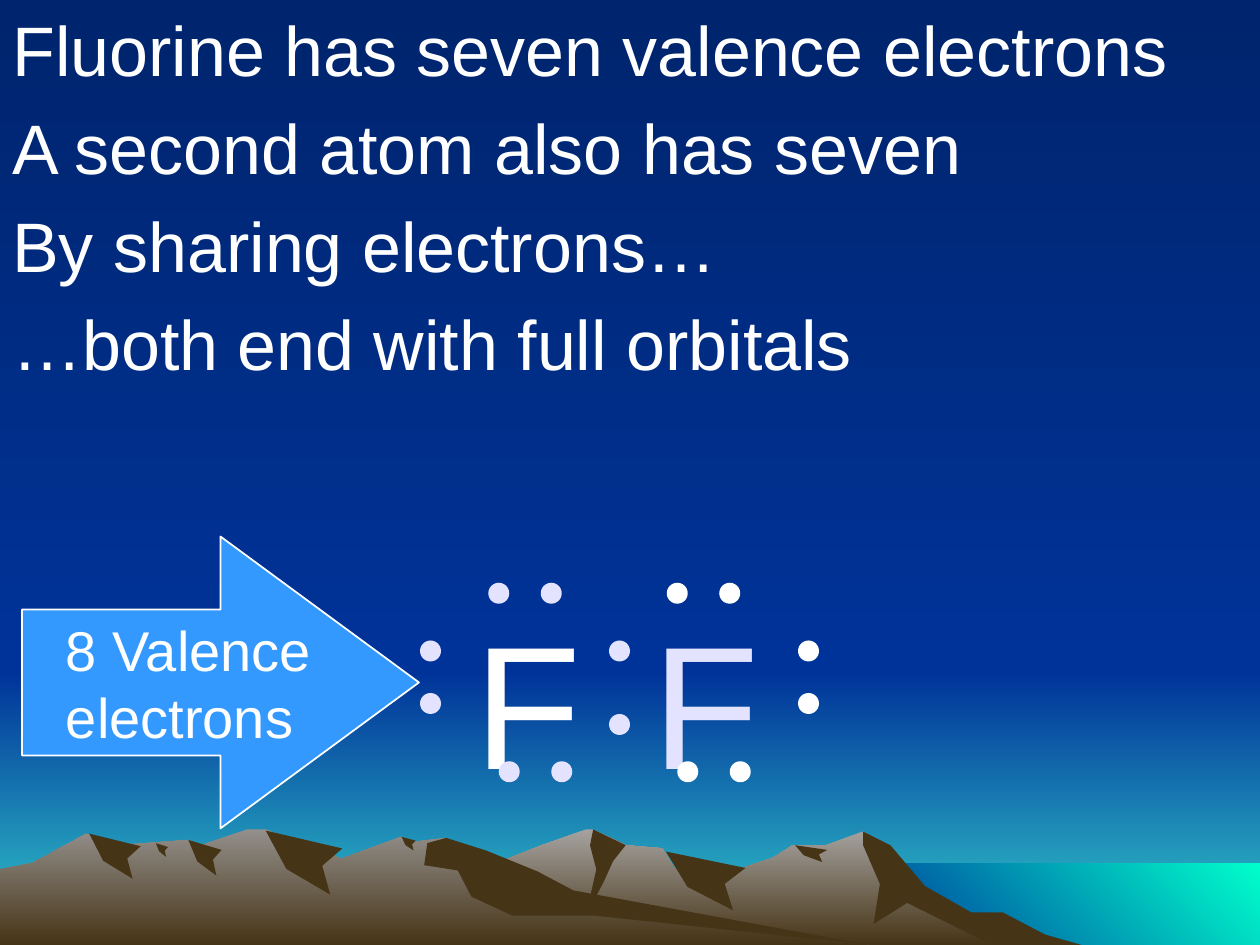
"""Build a slide on how two fluorine atoms share electrons."""
import pptx
import pptx.util
import pptx.dml.color
import pptx.enum.shapes
import pptx.enum.text
import lxml.etree

THEME = {
    "font": "Arial", "body": 40, "atom": 100, "note": 32,
    "white": "FFFFFF", "lilac": "E3E3FF", "blue": "3399FF",
    "night": ("00246D", "003399"), "dusk": ("003399", "33CCCC"),
    "sea": ("003399", "00FFCC"), "peak": ("A5A29F", "463416"),
    "ridge": ("938F8B", "463416"), "shade": "463416",
}
DOWN, RISE = 270, 45
COLS, ROWS = 120, 90

deck = pptx.Presentation()
deck.slide_width = pptx.util.Inches(10)
deck.slide_height = pptx.util.Inches(7.5)
slide = deck.slides.add_slide(deck.slide_layouts[6])
kinds = pptx.enum.shapes.MSO_SHAPE
cell = deck.slide_width / COLS


def paint(fill, color, angle=DOWN):
    if isinstance(color, str):
        fill.solid()
        fill.fore_color.rgb = pptx.dml.color.RGBColor.from_string(color)
        return
    fill.gradient()
    fill.gradient_angle = angle
    for stop, tone in zip(fill.gradient_stops, color):
        stop.color.rgb = pptx.dml.color.RGBColor.from_string(tone)


def write(text, box, size, color="white", before=50, hang=0, fit=True):
    frame = slide.shapes.add_textbox(*[round(n * cell) for n in box]).text_frame
    frame.word_wrap = True
    if fit:
        frame.auto_size = pptx.enum.text.MSO_AUTO_SIZE.SHAPE_TO_FIT_TEXT
    frame.text = text
    for para in frame.paragraphs:
        props = para._p.get_or_add_pPr()
        if hang:
            props.set("marL", str(pptx.util.Inches(hang)))
            props.set("indent", str(-pptx.util.Inches(hang)))
        space = lxml.etree.SubElement(props, pptx.oxml.ns.qn("a:spcBef"))
        share = lxml.etree.SubElement(space, pptx.oxml.ns.qn("a:spcPct"))
        share.set("val", str(before * 1000))
        font = para.runs[0].font
        font.name = THEME["font"]
        font.size = pptx.util.Pt(THEME[size])
        font.color.rgb = pptx.dml.color.RGBColor.from_string(THEME[color])


paint(slide.background.fill, THEME["night"])

# Flat bands: sky above the dusk line, dusk below it, sea at the right
dusk, shore, coast = 64, 82.2, 82
bands = [("dusk", DOWN, (0, dusk, COLS, ROWS - dusk)),
         ("night", DOWN, (0, 0, COLS, dusk)),
         ("sea", RISE, (coast, shore, COLS - coast, ROWS - shore))]
for tone, angle, box in bands:
    band = slide.shapes.add_shape(kinds.RECTANGLE, *[round(n * cell) for n in box])
    band.shadow.inherit = False
    band.line.fill.background()
    paint(band.fill, THEME[tone], angle)

far = [(31, 90), (39.2, 85.1), (47.3, 82.2), (51.6, 80.5), (55.8, 79), (56.5, 79),
       (59.6, 80.5), (63.1, 80.8), (64.3, 82.8), (67.9, 83.6), (73.6, 81.7),
       (75.5, 80.5), (78.7, 80.5), (82.2, 79.2), (84.2, 80.5), (86.8, 83.8),
       (91.7, 86.8), (96.2, 88.8), (98.5, 90)]
near = [(0, 90), (0, 82.8), (3.1, 82.2), (8.2, 79.4), (11.3, 80.5), (17.8, 80),
        (19.2, 80.5), (23.5, 79), (25.4, 79), (26.8, 79.6), (28.3, 81.7),
        (31.2, 81.1), (32.5, 81.8), (38.2, 79.7), (39.2, 80.2), (42.5, 79.8),
        (51.8, 85.4), (80, 89.8), (82.8, 90)]
east = [(82.2, 79.2), (84.8, 80.5), (88.1, 84.4), (92.5, 86.9), (95.5, 86.9),
        (99.5, 89), (103, 90), (94.5, 90), (86.4, 86), (83.2, 88), (83.8, 84.2),
        (82.2, 80.5)]
cliff = [(56.5, 79), (59.6, 80.5), (58.4, 82), (57.5, 84), (55.8, 87.2),
         (56.8, 82.8), (56.2, 80.5)]
spur = [(40.7, 80.3), (42.5, 79.8), (46.3, 81), (51.2, 83), (54.6, 84.8),
        (82.8, 90), (56.6, 87.2), (48.8, 87.2), (44.9, 85.4), (43.6, 82.9),
        (40.4, 82.4)]
slopes = [("peak", far), ("shade", east), ("shade", cliff),
          ("ridge", near), ("shade", spur)]

# Every gully is one outline, stretched to its own box
gully = [(0.04, 0), (1, 0.28), (0.75, 0.55), (0.85, 1), (0.3, 0.6)]
gaps = [(63.1, 81.1, 7.9, 5.6), (75.6, 80.5, 3.2, 1.6), (38.2, 79.7, 1.4, 1.3),
        (25, 79.1, 7.6, 6.1), (17.8, 80, 3.3, 3.4), (14.8, 80.3, 1.2, 1.3),
        (8.3, 79.4, 5.1, 4.3)]
for left, top, wide, high in gaps:
    slopes.append(("shade", [(left + x * wide, top + y * high) for x, y in gully]))

for tone, spots in slopes:
    spots = [(x * cell, y * cell) for x, y in spots]
    pen = slide.shapes.build_freeform(*spots[0])
    pen.add_line_segments(spots[1:], close=True)
    slope = pen.convert_to_shape()
    slope.shadow.inherit = False
    slope.line.fill.background()
    paint(slope.fill, THEME[tone])

lines = ["Fluorine has seven valence electrons", "A second atom also has seven",
         "By sharing electrons…", "…both end with full orbitals"]
write("\n".join(lines), (0, 0, COLS, 39), "body", before=20, hang=0.38, fit=False)

# Each atom has a pair above, a pair below and a pair on its outer side
size, gap = 2, 5
over, under, side = 55.5, 72.5, 61
dots = [("lilac", 58, side), ("lilac", 58, side + 7)]
for letter, tone, left, outer in [("white", "lilac", 44, 40), ("lilac", "white", 61, 76)]:
    write("F", (left, 56, 13, 21.2), "atom", color=letter)
    for step in (0, gap):
        dots += [(tone, left + 2.5 + step, over), (tone, left + 3.5 + step, under),
                 (tone, outer, side + step)]
for tone, col, row in dots:
    dot = slide.shapes.add_shape(
        kinds.OVAL, *[round(n * cell) for n in (col, row, size, size)])
    dot.shadow.inherit = False
    dot.line.fill.background()
    paint(dot.fill, THEME[tone])

arrow = slide.shapes.add_shape(
    kinds.RIGHT_ARROW, *[round(n * cell) for n in (2.1, 51.1, 37.8, 27.8)])
arrow.adjustments[0] = 0.5
arrow.adjustments[1] = 0.68
arrow.shadow.inherit = False
paint(arrow.fill, THEME["blue"])
paint(arrow.line.fill, THEME["white"])
arrow.line.width = pptx.util.Pt(1)
write("8 Valence electrons", (5.1, 58, 27, 14), "note")

deck.save("out.pptx")
